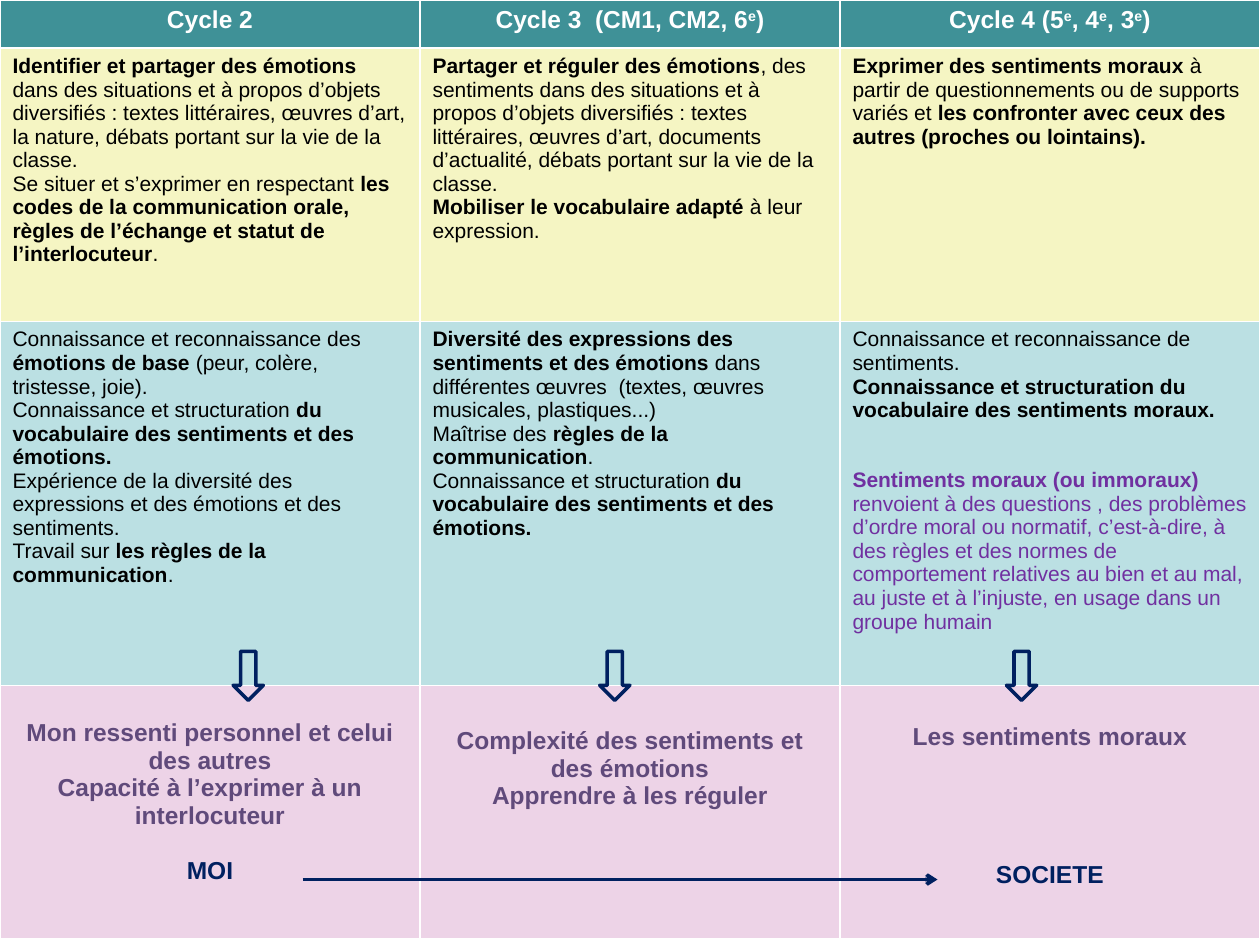
import pptx
import pptx.util
import pptx.dml.color
import pptx.enum.shapes
import pptx.enum.text
from lxml import etree

Cm = pptx.util.Cm
Pt = pptx.util.Pt
SHAPE = pptx.enum.shapes.MSO_SHAPE
ALIGN = pptx.enum.text.PP_ALIGN

NAVY, PLUM, VIOLET = "002060", "604A7B", "7030A0"
WIDE, HIGH = 25.4, 19.05

HEADS = [["Cycle 2"], ["Cycle 3  (CM1, CM2, 6^e^)"], ["Cycle 4 (5^e^, 4^e^, 3^e^)"]]
SKILLS = [
    [
        "*Identifier et partager des émotions* dans des situations et à propos d’objets diversifiés : textes littéraires, œuvres d’art, la nature, débats portant sur la vie de la classe.",
        "Se situer et s’exprimer en respectant *les codes de la communication orale, règles de l’échange et statut de l’interlocuteur*.",
    ],
    [
        "*Partager et réguler des émotions*, des sentiments dans des situations et à propos d’objets diversifiés : textes littéraires, œuvres d’art, documents d’actualité, débats portant sur la vie de la classe.",
        "*Mobiliser le vocabulaire adapté* à leur expression.",
    ],
    [
        "*Exprimer des sentiments moraux* à partir de questionnements ou de supports variés et *les confronter avec ceux des autres (proches ou lointains).*",
    ],
]
TOPICS = [
    [
        "Connaissance et reconnaissance des *émotions de base* (peur, colère, tristesse, joie).",
        "Connaissance et structuration *du vocabulaire des sentiments et des émotions.*",
        "Expérience de la diversité des expressions et des émotions et des sentiments.",
        "Travail sur *les règles de la communication*.",
    ],
    [
        "*Diversité des expressions des sentiments et des émotions* dans différentes œuvres  (textes, œuvres musicales, plastiques...)",
        "Maîtrise des *règles de la communication*.",
        "Connaissance et structuration *du vocabulaire des sentiments et des émotions.*",
    ],
    [
        "Connaissance et reconnaissance de sentiments.",
        "*Connaissance et structuration du vocabulaire des sentiments moraux.*",
        ("*Sentiments moraux (ou immoraux)* renvoient à des questions , des problèmes d’ordre moral ou normatif, c’est-à-dire, à des règles et des normes de comportement relatives au bien et au mal, au juste et à l’injuste, en usage dans un groupe humain",
         {"color": VIOLET, "before": 26.8}),
    ],
]
GOALS = [
    [
        "Mon ressenti personnel et celui des autres",
        "Capacité à l’exprimer à un interlocuteur",
        ("MOI", {"color": NAVY, "before": 15.8}),
    ],
    ["Complexité des sentiments et des émotions", "Apprendre à les réguler"],
    ["Les sentiments moraux", ("SOCIETE", {"color": NAVY, "before": 63.2})],
]

BODY = {"size": 12, "color": "000000"}
TITLE = {"size": 14, "bold": True, "align": ALIGN.CENTER}
EVEN = [0.13] * 3
ROWS = [
    (0.97, "3F9197", HEADS, {**TITLE, "color": "FFFFFF"}, EVEN),
    (5.51, "F5F5C3", SKILLS, BODY, EVEN),
    (7.34, "BBE0E3", TOPICS, BODY, EVEN),
    (5.11, "EDD3E7", GOALS, {**TITLE, "color": PLUM}, [0.68, 0.84, 0.76]),
]
DOWNS = [4.7, 12.09, 20.29]


def rgb(code):
    return pptx.dml.color.RGBColor.from_string(code)


def write(para, text, size=12, color="000000", bold=False, align=ALIGN.LEFT, before=0):
    para.alignment = align
    if before:
        para.space_before = Pt(before)
    for i, part in enumerate(text.split("*")):
        for j, bit in enumerate(part.split("^")):
            if bit:
                run = para.add_run()
                run.text = bit
                font = run.font
                font.name, font.size = "Arial", Pt(size)
                font.bold = bold or i % 2 == 1
                font.color.rgb = rgb(color)
                if j % 2:
                    font._element.set("baseline", "30000")


def fill_cell(cell, lines, fill, look, top):
    cell.fill.solid()
    cell.fill.fore_color.rgb = rgb(fill)
    cell.margin_top = Cm(top)
    frame = cell.text_frame
    for n, line in enumerate(lines):
        text, extra = line if isinstance(line, tuple) else (line, {})
        para = frame.add_paragraph() if n else frame.paragraphs[0]
        write(para, text, **{**look, **extra})


def ink(line):
    line.color.rgb = rgb(NAVY)
    line.width = Pt(2)


def main():
    deck = pptx.Presentation()
    deck.slide_width, deck.slide_height = Cm(WIDE), Cm(HIGH)
    slide = deck.slides.add_slide(deck.slide_layouts[6])
    shapes = slide.shapes

    total = sum(row[0] for row in ROWS)
    table = shapes.add_table(len(ROWS), 3, 0, 0, Cm(WIDE), Cm(total)).table
    for col in table.columns:
        col.width = Cm(WIDE / 3)
    for r, (tall, fill, cells, look, tops) in enumerate(ROWS):
        table.rows[r].height = Cm(tall)
        for c, lines in enumerate(cells):
            fill_cell(table.cell(r, c), lines, fill, look, tops[c])

    for left in DOWNS:
        down = shapes.add_shape(SHAPE.DOWN_ARROW, Cm(left), Cm(13.13), Cm(0.61), Cm(0.99))
        down.shadow.inherit = False
        down.fill.background()
        ink(down.line)

    path = shapes.add_connector(
        pptx.enum.shapes.MSO_CONNECTOR.STRAIGHT, Cm(6.1), Cm(17.73), Cm(18.9), Cm(17.73))
    ink(path.line)
    space = "{http://schemas.openxmlformats.org/drawingml/2006/main}"
    etree.SubElement(path.line._get_or_add_ln(), space + "tailEnd", type="arrow")
    etree.SubElement(path._element.spPr, space + "effectLst")

    deck.save("out.pptx")


if __name__ == "__main__":
    main()
